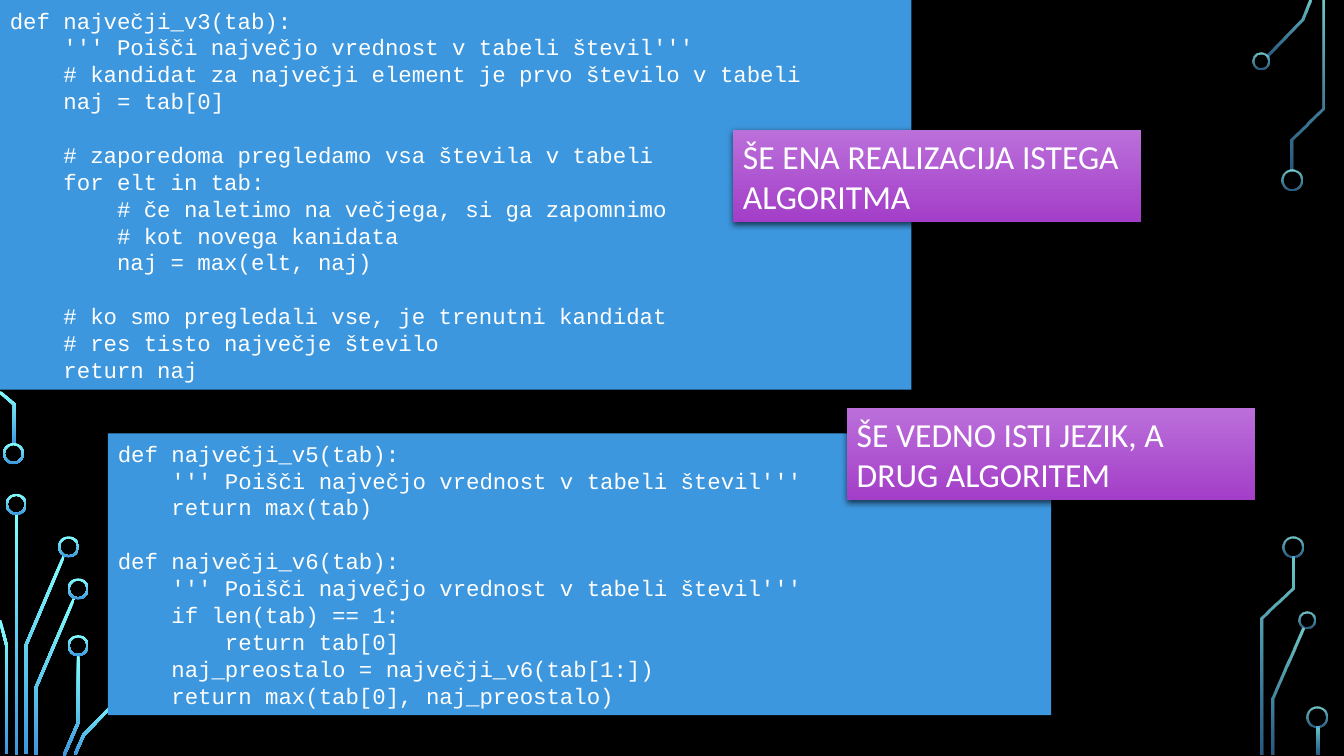
from dataclasses import dataclass
from math import hypot
from typing import Any

from lxml.etree import SubElement
from pptx import Presentation
from pptx.dml.color import RGBColor
from pptx.enum.shapes import MSO_SHAPE
from pptx.enum.text import MSO_ANCHOR, MSO_AUTO_SIZE, PP_ALIGN
from pptx.oxml.ns import qn
from pptx.util import Cm, Pt

COLORS = {
    "background": "000000",
    "text": "FFFFFF",
    "code": "3D97DE",
    "glow": "82FFFF",
    "label_top": "BB6FDA",
    "label_bottom": "A33EC8",
    "shadow": "000000",
}
TRACE_WIDTH = 0.07
RING_WIDTH = 0.05
CODE_PITCH = Pt(19.2)
SOLID = (100, 100)
FADED = (80, 60)


@dataclass(frozen=True)
class Area:
    left: float
    top: float
    width: float
    height: float

    def lengths(self) -> tuple[Cm, Cm, Cm, Cm]:
        return Cm(self.left), Cm(self.top), Cm(self.width), Cm(self.height)


@dataclass(frozen=True)
class Trace:
    points: tuple[tuple[float, float], ...]
    opacity: tuple[int, int] = SOLID


@dataclass(frozen=True)
class Ring:
    x: float
    y: float
    size: float = 0.53
    opacity: tuple[int, int] = SOLID


@dataclass(frozen=True)
class CodeBlock:
    area: Area
    source: str


@dataclass(frozen=True)
class Label:
    area: Area
    text: str


TRACES = [
    Trace(((0, 9.88), (0.36, 10.19), (0.36, 11.2))),
    Trace(((0.42, 12.95), (0.42, 19.02))),
    Trace(((1.61, 14.01), (0.65, 16.27), (0.65, 19))),
    Trace(((0, 15.63), (0.17, 16.28), (0.17, 19))),
    Trace(((1.87, 15.07), (0.9, 17.34), (0.9, 19.02))),
    Trace(((1.97, 16.51), (1.97, 18.21), (1.61, 19.04))),
    Trace(((3, 17.6), (2.11, 18.52), (1.89, 19.01))),
    Trace(((33.03, 0.01), (32.83, 0.5), (31.93, 1.41)), FADED),
    Trace(((33.34, 0.02), (33.34, 2.73), (32.56, 3.52), (32.56, 4.3)), FADED),
    Trace(((32.84, 15.84), (32.07, 17.61), (32.07, 19.02)), FADED),
    Trace(((32.6, 14.02), (32.6, 14.82), (31.81, 15.58), (31.81, 19.02)), FADED),
    Trace(((33.21, 18.31), (33.21, 19.02)), FADED),
]
RINGS = [
    Ring(0.34, 11.43),
    Ring(0.41, 12.71),
    Ring(1.73, 13.78),
    Ring(1.97, 14.84),
    Ring(1.97, 16.27),
    Ring(31.79, 1.53, 0.43, FADED),
    Ring(32.57, 4.54, opacity=FADED),
    Ring(32.93, 15.63, 0.43, FADED),
    Ring(32.59, 13.78, opacity=FADED),
    Ring(33.18, 18.08, opacity=FADED),
]
CODE_BLOCKS = [
    CodeBlock(Area(0, 0, 22.97, 9.82), """\
def največji_v3(tab):
    ''' Poišči največjo vrednost v tabeli števil'''
    # kandidat za največji element je prvo število v tabeli
    naj = tab[0]

    # zaporedoma pregledamo vsa števila v tabeli
    for elt in tab:
        # če naletimo na večjega, si ga zapomnimo
        # kot novega kanidata
        naj = max(elt, naj)

    # ko smo pregledali vse, je trenutni kandidat
    # res tisto največje število
    return naj"""),
    CodeBlock(Area(2.72, 10.92, 23.77, 7.1), """\
def največji_v5(tab):
    ''' Poišči največjo vrednost v tabeli števil'''
    return max(tab)

def največji_v6(tab):
    ''' Poišči največjo vrednost v tabeli števil'''
    if len(tab) == 1:
        return tab[0]
    naj_preostalo = največji_v6(tab[1:])
    return max(tab[0], naj_preostalo)"""),
]
TITLE = Label(Area(18.47, 3.28, 10.29, 2.31), "ŠE ENA REALIZACIJA ISTEGA ALGORITMA")
REMARK = Label(Area(21.34, 10.29, 10.29, 2.31), "ŠE VEDNO ISTI JEZIK, A DRUG ALGORITEM")


def color(name: str) -> RGBColor:
    return RGBColor.from_string(COLORS[name])


def paint_gradient(shape: Any, names: tuple[str, str], opacity: tuple[int, int] = SOLID) -> None:
    shape.fill.gradient()
    shape.fill.gradient_angle = 270
    for stop, name in zip(shape.fill.gradient_stops, names):
        stop.color.rgb = color(name)
    for tint, percent in zip(shape._element.spPr.iter(qn("a:srgbClr")), opacity):
        if percent < 100:
            SubElement(tint, qn("a:alpha"), val=str(percent * 1000))
    shape.line.fill.background()
    shape.shadow.inherit = False


def trace_outline(points: tuple[tuple[float, float], ...]) -> list[tuple[Cm, Cm]]:
    normals = []
    for (x1, y1), (x2, y2) in zip(points, points[1:]):
        length = hypot(x2 - x1, y2 - y1)
        normals.append(((y1 - y2) / length, (x2 - x1) / length))
    sides: tuple[list, list] = ([], [])
    for (x, y), (ax, ay), (bx, by) in zip(points, normals[:1] + normals, normals + normals[-1:]):
        reach = TRACE_WIDTH / 2 / (1 + ax * bx + ay * by)
        dx, dy = (ax + bx) * reach, (ay + by) * reach
        sides[0].append((Cm(x + dx), Cm(y + dy)))
        sides[1].append((Cm(x - dx), Cm(y - dy)))
    return sides[0] + sides[1][::-1]


def draw_trace(page: Any, trace: Trace) -> None:
    start, *rest = trace_outline(trace.points)
    builder = page.shapes.build_freeform(*start)
    builder.add_line_segments(rest, close=True)
    paint_gradient(builder.convert_to_shape(), ("glow", "code"), trace.opacity)


def draw_ring(page: Any, ring: Ring) -> None:
    area = Area(ring.x - ring.size / 2, ring.y - ring.size / 2, ring.size, ring.size)
    donut = page.shapes.add_shape(MSO_SHAPE.DONUT, *area.lengths())
    donut.adjustments[0] = RING_WIDTH / ring.size
    paint_gradient(donut, ("glow", "code"), ring.opacity)


def add_span(para: Any, text: str, font: str, size: int) -> None:
    para.alignment = PP_ALIGN.LEFT
    span = para.add_run()
    span.text = text
    span.font.name = font
    span.font.size = Pt(size)
    span.font.color.rgb = color("text")


def prepare_frame(box: Any) -> Any:
    frame = box.text_frame
    frame.word_wrap = True
    frame.auto_size = MSO_AUTO_SIZE.NONE
    frame.vertical_anchor = MSO_ANCHOR.MIDDLE
    return frame


def draw_code(page: Any, block: CodeBlock) -> None:
    box = page.shapes.add_shape(MSO_SHAPE.RECTANGLE, *block.area.lengths())
    box.fill.solid()
    box.fill.fore_color.rgb = color("code")
    box.line.fill.background()
    box.shadow.inherit = False
    frame = prepare_frame(box)
    para = frame.paragraphs[0]
    for section_number, section in enumerate(block.source.split("\n\n")):
        for line_number, line in enumerate(section.split("\n")):
            if section_number or line_number:
                para = frame.add_paragraph()
            para.line_spacing = CODE_PITCH
            para.space_before = CODE_PITCH if section_number and not line_number else Pt(0)
            add_span(para, line, "Courier New", 16)


def fill_label(box: Any, label: Label) -> None:
    box.left, box.top, box.width, box.height = label.area.lengths()
    paint_gradient(box, ("label_top", "label_bottom"))
    effects = box._element.spPr.find(qn("a:effectLst"))
    shadow = SubElement(effects, qn("a:outerShdw"), blurRad=str(Pt(4.5)), dist=str(Pt(1.5)),
                        dir="5400000", rotWithShape="0")
    tint = SubElement(shadow, qn("a:srgbClr"), val=COLORS["shadow"])
    SubElement(tint, qn("a:alpha"), val="63000")
    add_span(prepare_frame(box).paragraphs[0], label.text, "Calibri", 24)


def main() -> None:
    deck = Presentation()
    deck.slide_width, deck.slide_height = Cm(33.87), Cm(19.05)
    page = deck.slides.add_slide(deck.slide_layouts[5])
    page.background.fill.solid()
    page.background.fill.fore_color.rgb = color("background")
    for trace in TRACES:
        draw_trace(page, trace)
    for ring in RINGS:
        draw_ring(page, ring)
    for block in CODE_BLOCKS:
        draw_code(page, block)
    title = page.shapes.title
    page.shapes._spTree.append(title._element)
    fill_label(title, TITLE)
    fill_label(page.shapes.add_shape(MSO_SHAPE.RECTANGLE, *REMARK.area.lengths()), REMARK)
    deck.save("out.pptx")


if __name__ == "__main__":
    main()
